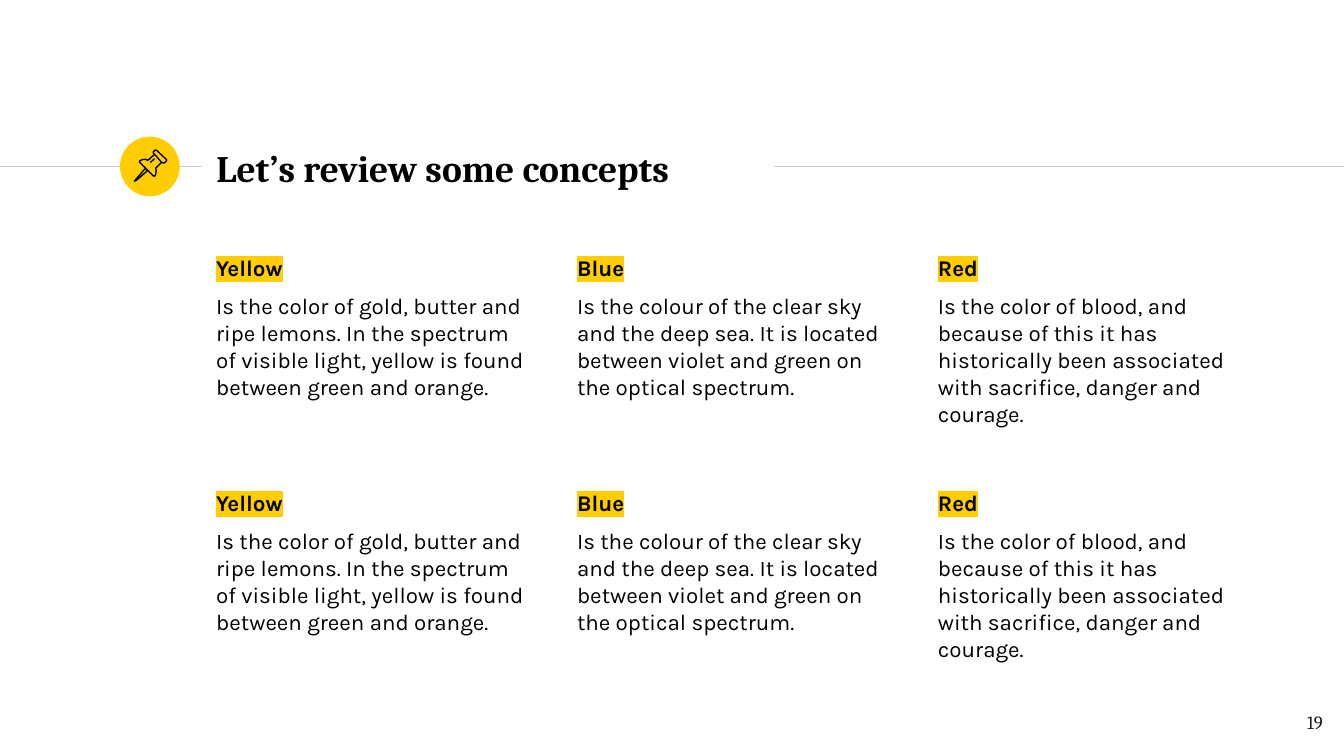
from dataclasses import dataclass

from lxml import etree
from pptx import Presentation
from pptx.dml.color import RGBColor
from pptx.enum.shapes import MSO_CONNECTOR, MSO_SHAPE
from pptx.enum.text import MSO_ANCHOR, MSO_AUTO_SIZE, PP_ALIGN
from pptx.oxml.ns import qn
from pptx.util import Pt

STRAIGHT = MSO_CONNECTOR.STRAIGHT
OVAL = MSO_SHAPE.OVAL
TOP, MIDDLE = MSO_ANCHOR.TOP, MSO_ANCHOR.MIDDLE
LEFT, RIGHT = PP_ALIGN.LEFT, PP_ALIGN.RIGHT
NO_FIT = MSO_AUTO_SIZE.NONE
TITLE_ONLY = 5


@dataclass(frozen=True)
class Theme:
    accent: str = "FFCD00"
    rule: str = "CCCCCC"
    ink: str = "000000"
    page_ink: str = "1D1D1B"
    serif: str = "Cambria"
    sans: str = "Karla"
    title_size: float = 20
    body_size: float = 12
    page_size: float = 10
    line_width: float = 0.75
    inset: float = 7.2
    space_before: float = 6


@dataclass(frozen=True)
class Box:
    left: float
    top: float
    width: float
    height: float


@dataclass(frozen=True)
class Concept:
    name: str
    text: str


@dataclass(frozen=True)
class Stroke:
    points: tuple
    closed: bool


THEME = Theme()
CONCEPTS = (
    Concept("Yellow", "Is the color of gold, butter and ripe lemons. In the spectrum "
            "of visible light, yellow is found between green and orange."),
    Concept("Blue", "Is the colour of the clear sky and the deep sea. It is located "
            "between violet and green on the optical spectrum."),
    Concept("Red", "Is the color of blood, and because of this it has historically "
            "been associated with sacrifice, danger and courage."),
)
FIRST_CELL = Box(108.72, 128.88, 183.6, 95)
COLUMN_STEP, ROW_STEP, ROWS = 193.32, 126, 2
RULE_Y = 89.2
RULES = ((0, 108), (414.72, 720))
PUSHPIN = (
    Stroke(((77.8, 90.3), (72.7, 96.2), (72, 97.1), (73.1, 96.6), (79, 91.5)), True),
    Stroke(((82.8, 82.6), (86.6, 87), (87.4, 87.3), (88.3, 87.2), (89.1, 86.4),
            (89.3, 85.9), (89.2, 85.5), (83.9, 80.5), (83.2, 80.4), (82.3, 81.2),
            (82.1, 82)), True),
    Stroke(((82.8, 82.8), (79.2, 85.9), (78, 85.4), (76.3, 85.5), (74.9, 86.2),
            (74.7, 86.8), (82.2, 94.3), (82.9, 94.4), (83.4, 93.4), (83.7, 91.5),
            (83.5, 90), (86.4, 87.1)), False),
    Stroke(((80.6, 87.1), (82.8, 85)), False),
)


def rgb(value: str) -> RGBColor:
    return RGBColor.from_string(value)


def place(sp, box: Box) -> None:
    sp.left, sp.top = Pt(box.left), Pt(box.top)
    sp.width, sp.height = Pt(box.width), Pt(box.height)


def set_frame(tf, anchor=TOP) -> None:
    tf.word_wrap = True
    tf.auto_size = NO_FIT
    tf.vertical_anchor = anchor
    tf.margin_left = tf.margin_right = Pt(THEME.inset)
    tf.margin_top = tf.margin_bottom = Pt(THEME.inset)


def write(p, text: str, *, font: str = THEME.sans, size: float = THEME.body_size,
          color: str = THEME.ink, bold: bool = False, align=LEFT,
          before: float = 0, highlight: str = "") -> None:
    p.alignment = align
    p.space_before = Pt(before)
    r = p.add_run()
    r.text = text
    r.font.name, r.font.size, r.font.bold = font, Pt(size), bold
    r.font.color.rgb = rgb(color)
    if highlight:
        mark = etree.Element(qn("a:highlight"))
        etree.SubElement(mark, qn("a:srgbClr"), val=highlight)
        r.font._element.find(qn("a:latin")).addprevious(mark)


def add_text_box(s, box: Box):
    sp = s.shapes.add_textbox(0, 0, 0, 0)
    place(sp, box)
    set_frame(sp.text_frame)
    return sp.text_frame


def add_rule(s, start: float, end: float) -> None:
    line = s.shapes.add_connector(STRAIGHT, Pt(start), Pt(RULE_Y), Pt(end), Pt(RULE_Y))
    line.line.color.rgb = rgb(THEME.rule)
    line.line.width = Pt(THEME.line_width)
    etree.SubElement(line._element.spPr, qn("a:effectLst"))


def add_badge(s, box: Box) -> None:
    sp = s.shapes.add_shape(OVAL, 0, 0, 0, 0)
    place(sp, box)
    sp.shadow.inherit = False
    sp.fill.solid()
    sp.fill.fore_color.rgb = rgb(THEME.accent)
    sp.line.fill.background()


def add_pushpin(s) -> None:
    group = s.shapes.add_group_shape()
    for stroke in PUSHPIN:
        start, *rest = [(Pt(x), Pt(y)) for x, y in stroke.points]
        builder = group.shapes.build_freeform(*start)
        builder.add_line_segments(rest, close=stroke.closed)
        sp = builder.convert_to_shape()
        sp.shadow.inherit = False
        sp.fill.background()
        sp.line.color.rgb = rgb(THEME.ink)
        sp.line.width = Pt(THEME.line_width)


def add_title(s, text: str, box: Box) -> None:
    sp = s.shapes.title
    place(sp, box)
    set_frame(sp.text_frame, MIDDLE)
    write(sp.text_frame.paragraphs[0], text, font=THEME.serif,
          size=THEME.title_size, bold=True)


def add_concept(s, concept: Concept, box: Box) -> None:
    tf = add_text_box(s, box)
    write(tf.paragraphs[0], concept.name, bold=True, highlight=THEME.accent)
    write(tf.add_paragraph(), concept.text, before=THEME.space_before)


def main() -> None:
    prs = Presentation()
    prs.slide_width, prs.slide_height = Pt(720), Pt(405)
    s = prs.slides.add_slide(prs.slide_layouts[TITLE_ONLY])

    for start, end in RULES:
        add_rule(s, start, end)
    add_badge(s, Box(64.3, 73.2, 32, 32))
    add_pushpin(s)
    add_title(s, "Let’s review some concepts", Box(108.72, 72.72, 305.28, 34.56))

    for row in range(ROWS):
        for col, concept in enumerate(CONCEPTS):
            add_concept(s, concept, Box(FIRST_CELL.left + col * COLUMN_STEP,
                                        FIRST_CELL.top + row * ROW_STEP,
                                        FIRST_CELL.width, FIRST_CELL.height))

    tf = add_text_box(s, Box(672.48, 373.68, 43.2, 31))
    write(tf.paragraphs[0], "19", font=THEME.serif, size=THEME.page_size,
          color=THEME.page_ink, align=RIGHT)
    prs.save("out.pptx")


if __name__ == "__main__":
    main()
